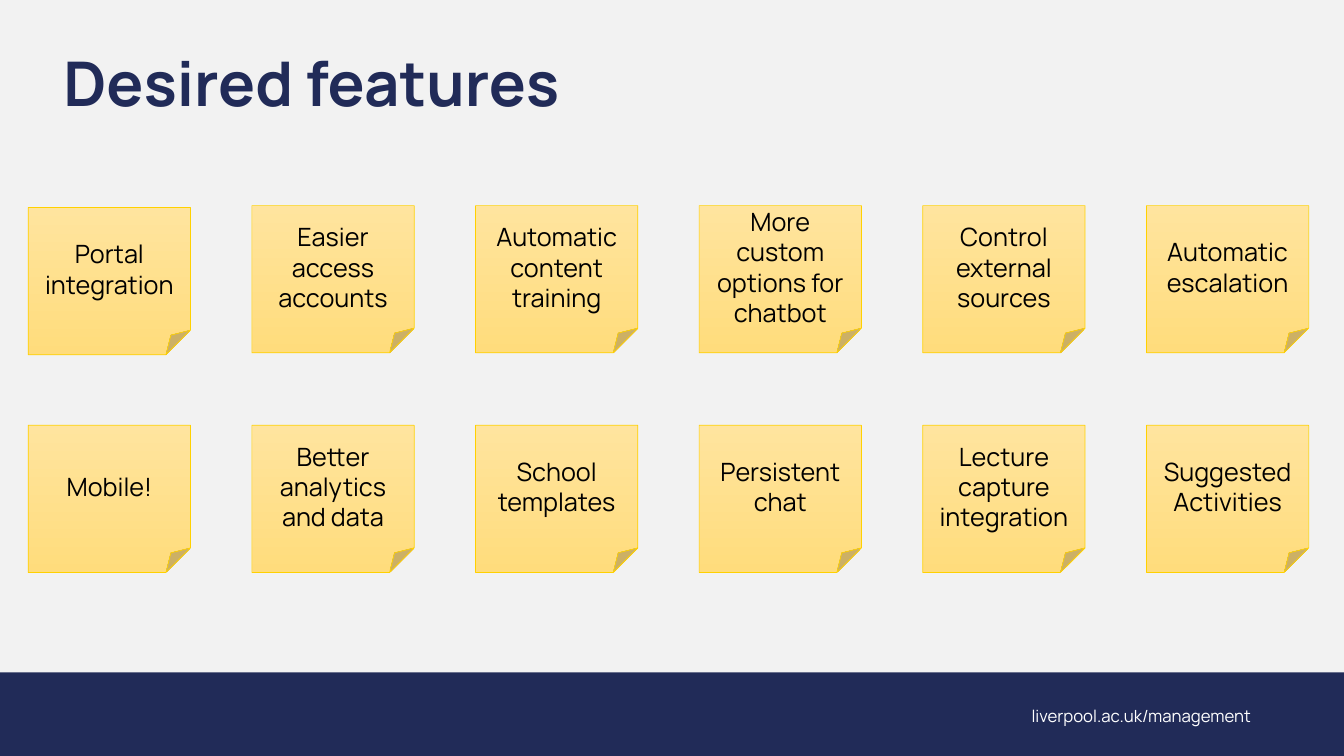
import pptx
import pptx.dml.color
import pptx.enum.shapes
import pptx.enum.text
import pptx.util
from pptx.util import Inches

FONT = "Manrope"
NAVY = "212B58"
FIRST_LEFT, LAST_LEFT = 0.28, 11.37
ROW_TOPS = (2.04, 4.22)
FIRST_NOTE_DROP = 0.02
FEATURES = (
    ("Portal integration", "Easier access accounts", "Automatic content training",
     "More custom options for chatbot", "Control external sources",
     "Automatic escalation"),
    ("Mobile!", "Better analytics and data", "School templates",
     "Persistent chat", "Lecture capture integration", "Suggested Activities"),
)


def color(value):
    return pptx.dml.color.RGBColor.from_string(value)


def write(shape, text, size, font_color, alignment, anchor, bold=False):
    """Fill the shape with one wrapped paragraph and return that paragraph."""
    frame = shape.text_frame
    frame.word_wrap = True
    frame.vertical_anchor = anchor
    paragraph = frame.paragraphs[0]
    paragraph.text = text
    paragraph.alignment = alignment
    font = paragraph.font
    font.name = FONT
    font.size = pptx.util.Pt(size)
    font.bold = bold
    font.color.rgb = color(font_color)
    return paragraph


def add_title(slide, text):
    box = slide.shapes.add_textbox(Inches(0.53), Inches(0.48), Inches(10.71), Inches(0.85))
    paragraph = write(box, text, 44, NAVY, pptx.enum.text.PP_ALIGN.LEFT,
                      pptx.enum.text.MSO_ANCHOR.TOP, bold=True)
    paragraph.line_spacing = 0.9


def add_footer(slide, text):
    band = slide.shapes.add_shape(pptx.enum.shapes.MSO_SHAPE.RECTANGLE,
                                  0, Inches(6.67), Inches(13.33), Inches(0.83))
    band.shadow.inherit = False
    band.fill.solid()
    band.fill.fore_color.rgb = color(NAVY)
    band.line.fill.background()
    box = slide.shapes.add_textbox(Inches(7.25), Inches(7), Inches(5.16), Inches(0.2))
    frame = box.text_frame
    frame.margin_left = frame.margin_right = frame.margin_top = frame.margin_bottom = 0
    write(box, text, 12, "FFFFFF", pptx.enum.text.PP_ALIGN.RIGHT,
          pptx.enum.text.MSO_ANCHOR.MIDDLE)


def add_sticky_note(slide, left, top, text):
    note = slide.shapes.add_shape(pptx.enum.shapes.MSO_SHAPE.FOLDED_CORNER,
                                  Inches(left), Inches(top), Inches(1.61), Inches(1.46))
    note.shadow.inherit = False
    note.fill.gradient()
    note.fill.gradient_angle = 270
    for stop, stop_color in zip(note.fill.gradient_stops, ("FFE49E", "FFDC7C")):
        stop.color.rgb = color(stop_color)
    note.line.color.rgb = color("FFD100")
    note.line.width = pptx.util.Pt(0.5)
    write(note, text, 18, "000000", pptx.enum.text.PP_ALIGN.CENTER,
          pptx.enum.text.MSO_ANCHOR.MIDDLE)


def add_feature_grid(slide):
    for row, (top, features) in enumerate(zip(ROW_TOPS, FEATURES)):
        step = (LAST_LEFT - FIRST_LEFT) / (len(features) - 1)
        for column, feature in enumerate(features):
            drop = FIRST_NOTE_DROP if row == column == 0 else 0
            add_sticky_note(slide, FIRST_LEFT + column * step, top + drop, feature)


def main():
    presentation = pptx.Presentation()
    presentation.slide_width = Inches(13.33)
    presentation.slide_height = Inches(7.5)
    slide = presentation.slides.add_slide(presentation.slide_layouts[6])
    slide.background.fill.solid()
    slide.background.fill.fore_color.rgb = color("F2F2F2")
    add_footer(slide, "liverpool.ac.uk/management")
    add_title(slide, "Desired features")
    add_feature_grid(slide)
    presentation.save("out.pptx")


if __name__ == "__main__":
    main()
